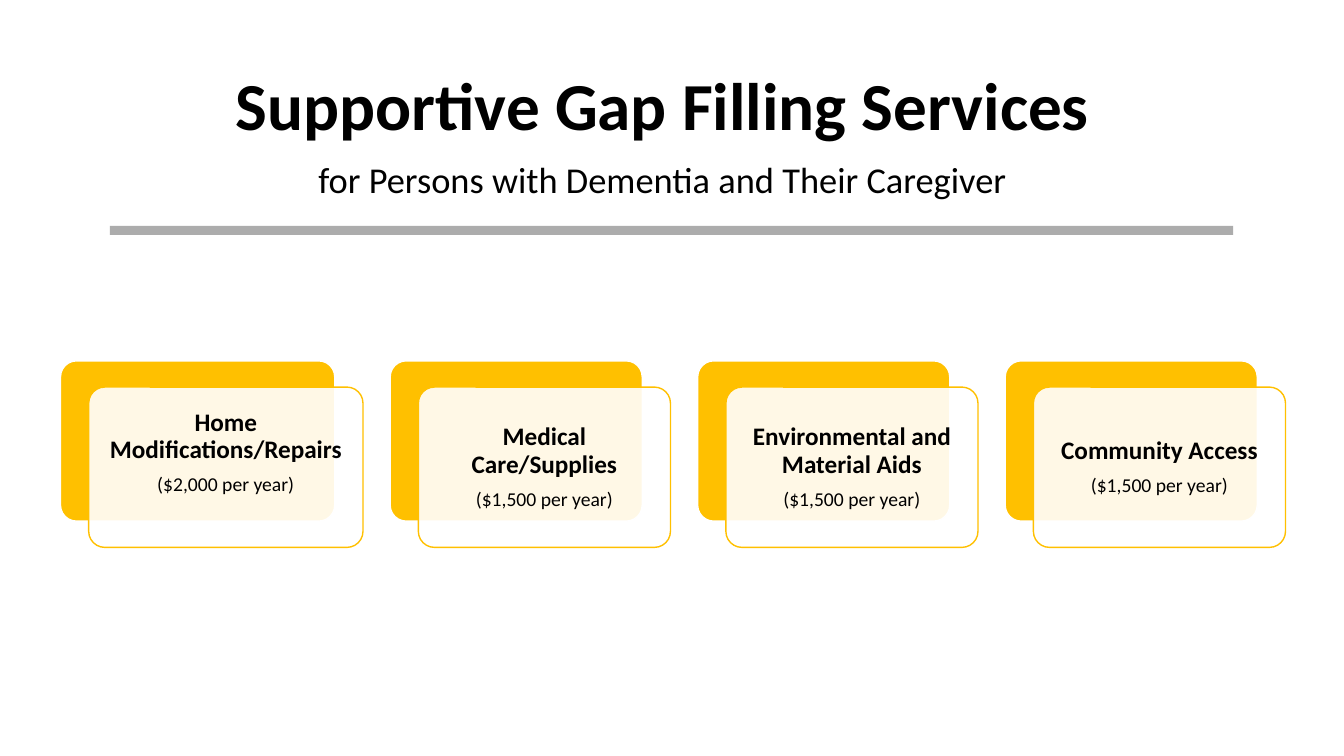
from dataclasses import dataclass

from lxml import etree
from pptx import Presentation
from pptx.dml.color import RGBColor
from pptx.enum.shapes import MSO_SHAPE
from pptx.enum.text import MSO_ANCHOR, PP_ALIGN
from pptx.oxml.ns import qn
from pptx.util import Inches, Pt

RECTANGLE = MSO_SHAPE.RECTANGLE
ROUNDED = MSO_SHAPE.ROUNDED_RECTANGLE
MIDDLE = MSO_ANCHOR.MIDDLE
CENTER = PP_ALIGN.CENTER


@dataclass(frozen=True)
class Theme:
    """Colours, font and type sizes of the slide."""
    font: str = "Calibri"
    ink: str = "000000"
    paper: str = "FFFFFF"
    gold: str = "FFC000"
    rule: str = "808080"
    title: float = 48
    subtitle: float = 26
    heading: float = 18
    price: float = 14


THEME = Theme()
WIDTH, HEIGHT = 13.33, 7.5
MARGIN, CONTENT_WIDTH = 1.09, 11.14
CARD_LEFT, CARD_TOP, CARD_HEIGHT, CARD_GAP = 0.6, 3.58, 1.59, 0.55
CARD_SHIFT_X, CARD_SHIFT_Y = 0.28, 0.26
CARD_PADDING, TEXT_INSET = 0.05, 0.07

CARDS = [
    ("Home Modifications/Repairs", "($2,000 per year)", 2.72, 0.36),
    ("Medical Care/Supplies", "($1,500 per year)", 2.5, TEXT_INSET),
    ("Environmental and Material Aids", "($1,500 per year)", 2.5, TEXT_INSET),
    ("Community Access", "($1,500 per year)", 2.5, TEXT_INSET),
]


def add_panel(page, kind, box, fill, line=None, opacity=100):
    """Draw a filled shape in box, with an optional outline and opacity."""
    panel = page.shapes.add_shape(kind, *map(Inches, box))
    panel.shadow.inherit = False
    panel.fill.solid()
    panel.fill.fore_color.rgb = RGBColor.from_string(fill)
    if opacity < 100:
        color = panel.fill._xPr.find(qn("a:solidFill"))[0]
        etree.SubElement(color, qn("a:alpha"), val=str(opacity * 1000))
    if line:
        panel.line.color.rgb = RGBColor.from_string(line)
        panel.line.width = Pt(1)
    else:
        panel.line.fill.background()
    if kind == ROUNDED:
        panel.adjustments[0] = 0.1
    return panel


def add_text_box(page, box, insets):
    """Add a wrapping, vertically centred text frame with the given insets."""
    frame = page.shapes.add_textbox(*map(Inches, box)).text_frame
    frame.word_wrap = True
    frame.vertical_anchor = MIDDLE
    (frame.margin_left, frame.margin_top,
     frame.margin_right, frame.margin_bottom) = map(Inches, insets)
    return frame


def write(para, text, size, bold=False, before=0, after=0):
    """Write one centred paragraph with its format."""
    para.alignment = CENTER
    para.line_spacing = 0.9
    para.space_before, para.space_after = Pt(before), Pt(after)
    span = para.add_run()
    span.text = text
    span.font.name = THEME.font
    span.font.size = Pt(size)
    span.font.bold = bold
    span.font.color.rgb = RGBColor.from_string(THEME.ink)


def add_header(page, box):
    """Place the title, the subtitle and the rule below them."""
    left, top, width, height = box
    frame = add_text_box(page, box, (0.1, 0.05, 0.27, 0.1))
    write(frame.paragraphs[0], "Supportive Gap Filling Services", THEME.title, bold=True)
    write(frame.add_paragraph(), "for Persons with Dementia and Their Caregiver",
          THEME.subtitle, before=12.5)
    add_panel(page, RECTANGLE, (left, top + height + 0.13, width, 0.09),
              THEME.rule, opacity=65)


def add_card(page, box, heading, price, bottom_inset):
    """Place a gold panel, the shifted sheet over it and the sheet's text."""
    left, top, width, height = box
    add_panel(page, ROUNDED, box, THEME.gold, THEME.paper)
    left, top = left + CARD_SHIFT_X, top + CARD_SHIFT_Y
    add_panel(page, ROUNDED, (left, top, width, height),
              THEME.paper, THEME.gold, opacity=90)
    text_box = (left + CARD_PADDING, top + CARD_PADDING,
                width - 2 * CARD_PADDING, height - 2 * CARD_PADDING)
    frame = add_text_box(page, text_box, (TEXT_INSET,) * 3 + (bottom_inset,))
    write(frame.paragraphs[0], heading, THEME.heading, bold=True, after=7.5)
    write(frame.add_paragraph(), price, THEME.price)


def add_card_row(page, left, top, height):
    """Lay the service cards out from left to right with equal gaps."""
    for heading, price, width, bottom_inset in CARDS:
        add_card(page, (left, top, width, height), heading, price, bottom_inset)
        left += width + CARD_GAP


def main():
    """Build the slide and save the deck."""
    deck = Presentation()
    deck.slide_width, deck.slide_height = Inches(WIDTH), Inches(HEIGHT)
    page = deck.slides.add_slide(deck.slide_layouts[6])
    add_header(page, (MARGIN, 0.66, CONTENT_WIDTH, 1.45))
    add_card_row(page, CARD_LEFT, CARD_TOP, CARD_HEIGHT)
    deck.save("out.pptx")


if __name__ == "__main__":
    main()
